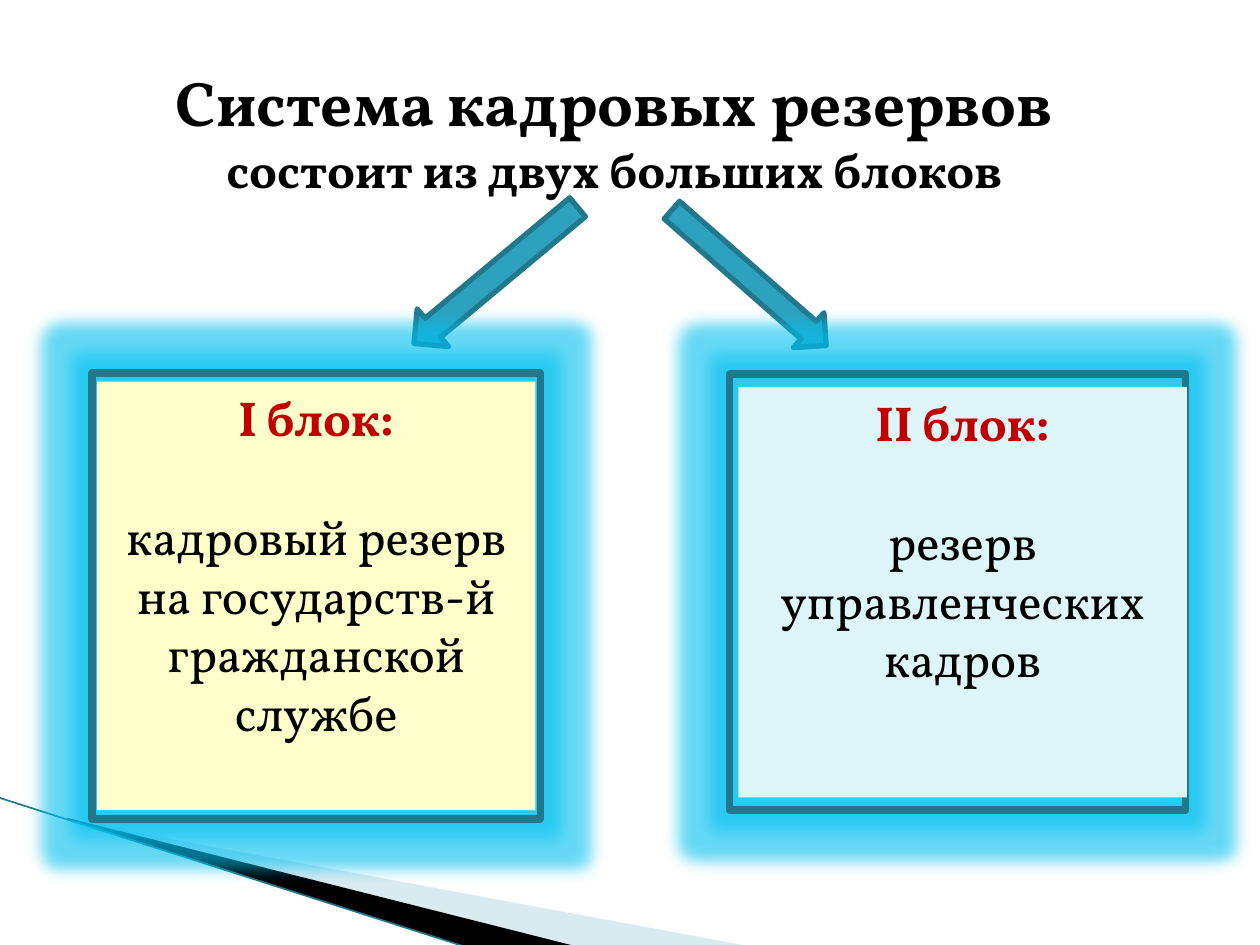
from typing import NamedTuple

from lxml import etree
from pptx import Presentation
from pptx.dml.color import RGBColor
from pptx.enum.shapes import MSO_CONNECTOR, MSO_SHAPE
from pptx.enum.text import MSO_ANCHOR, MSO_AUTO_SIZE, PP_ALIGN
from pptx.oxml.ns import qn
from pptx.util import Inches, Pt

RECT, ARROW = MSO_SHAPE.RECTANGLE, MSO_SHAPE.DOWN_ARROW
STRAIGHT = MSO_CONNECTOR.STRAIGHT
CENTER = PP_ALIGN.CENTER
TOP, MIDDLE = MSO_ANCHOR.TOP, MSO_ANCHOR.MIDDLE
NO_FIT = MSO_AUTO_SIZE.NONE

FONT = "Vollkorn"
TEAL, EDGE, GLOW = "2DA2BF", "21788D", "00C0F0"
BLACK, RED = "000000", "C00000"


class Box(NamedTuple):
    left: float
    top: float
    width: float
    height: float


class Block(NamedTuple):
    frame: Box
    panel: Box
    fill: str
    head: str
    body: str


class Arrow(NamedTuple):
    box: Box
    turn: float


class Wedge(NamedTuple):
    points: list[tuple[float, float]]
    fill: str
    alpha: int


WEDGES = [
    Wedge([(0.55, 6.51), (5.95, 7.51), (4.56, 7.51), (0.55, 6.5)], "A0CBDC", 40),
    Wedge([(0.53, 6.49), (4.57, 7.51), (3.72, 7.52), (0.54, 6.5)], BLACK, 100),
]
ARROWS = [
    Arrow(Box(3.74, 1.34, 0.39, 1.69), 50.2),
    Arrow(Box(5.76, 1.39, 0.37, 1.63), 311.3),
]
BLOCKS = [
    Block(Box(5.79, 2.97, 3.62, 3.46), Box(5.86, 3.07, 3.56, 3.26), "DEF5FA",
          "II блок:", "резерв управленческих кадров"),
    Block(Box(0.73, 2.96, 3.56, 3.54), Box(0.77, 3.03, 3.48, 3.4), "FFFFCC",
          "I блок:", "кадровый резерв на государств-й гражданской службе"),
]


def color(code: str) -> RGBColor:
    return RGBColor.from_string(code)


def paint(shape, fill: str | None, line: str | None = None, width: float = 0) -> None:
    """Set fill and outline; None leaves either one empty."""
    shape.shadow.inherit = False
    if fill:
        shape.fill.solid()
        shape.fill.fore_color.rgb = color(fill)
    else:
        shape.fill.background()
    if line:
        shape.line.color.rgb = color(line)
        shape.line.width = Pt(width)
    else:
        shape.line.fill.background()


def add_alpha(node, percent: int) -> None:
    etree.SubElement(node, qn("a:alpha"), val=str(percent * 1000))


def add_glow(shape, size: float) -> None:
    effects = shape._element.spPr.find(qn("a:effectLst"))
    glow = etree.SubElement(effects, qn("a:glow"), rad=str(Inches(size)))
    add_alpha(etree.SubElement(glow, qn("a:srgbClr"), val=GLOW), 60)


def add_shape(slide, kind, box: Box):
    return slide.shapes.add_shape(kind, *map(Inches, box))


def add_run(para, text: str, size: float, code: str, bold: bool) -> None:
    run = para.add_run()
    run.text = text
    font = run.font
    font.name, font.size, font.bold = FONT, Pt(size), bold
    font.color.rgb = color(code)


def draw_wedge(slide, wedge: Wedge) -> None:
    first, *rest = [(Inches(x), Inches(y)) for x, y in wedge.points]
    pen = slide.shapes.build_freeform(*first)
    pen.add_line_segments(rest, close=True)
    shape = pen.convert_to_shape()
    paint(shape, wedge.fill)
    if wedge.alpha < 100:
        add_alpha(shape._element.spPr.find(".//" + qn("a:srgbClr")), wedge.alpha)


def draw_edge(slide) -> None:
    ends = map(Inches, (-0.01, 6.33, 3.71, 7.52))
    line = slide.shapes.add_connector(STRAIGHT, *ends)
    line.line.color.rgb = color(EDGE)
    line.line.width = Pt(0.95)
    etree.SubElement(line._element.spPr, qn("a:effectLst"))


def draw_title(slide) -> None:
    title = slide.shapes.title
    title.left, title.top, title.width, title.height = map(
        Inches, (0.5, 0.3, 8.75, 1.88))
    frame = title.text_frame
    frame.auto_size, frame.word_wrap = NO_FIT, True
    frame.vertical_anchor = MIDDLE
    frame.margin_bottom = Inches(0.45)
    para = frame.paragraphs[0]
    para.alignment = CENTER
    add_run(para, "Система кадровых резервов", 36, BLACK, True)
    para.add_line_break()
    add_run(para, "состоит из двух больших блоков", 28, BLACK, True)


def draw_arrow(slide, arrow: Arrow) -> None:
    shape = add_shape(slide, ARROW, arrow.box)
    shape.rotation = arrow.turn
    paint(shape, TEAL, EDGE, 3)


def draw_block(slide, block: Block) -> None:
    border = add_shape(slide, RECT, block.frame)
    paint(border, None, EDGE, 4.33)
    add_glow(border, 0.25)

    panel = add_shape(slide, RECT, block.panel)
    paint(panel, block.fill)
    frame = panel.text_frame
    frame.word_wrap, frame.auto_size = True, NO_FIT
    frame.vertical_anchor = TOP
    head, body = frame.paragraphs[0], frame.add_paragraph()
    head.alignment = body.alignment = CENTER
    body.space_before = Pt(34)
    add_run(head, block.head, 28, RED, True)
    add_run(body, block.body, 28, BLACK, False)


def main() -> None:
    deck = Presentation()
    deck.slide_width, deck.slide_height = Inches(10), Inches(7.5)
    slide = deck.slides.add_slide(deck.slide_layouts[5])
    for wedge in WEDGES:
        draw_wedge(slide, wedge)
    draw_edge(slide)
    draw_title(slide)
    for arrow in ARROWS:
        draw_arrow(slide, arrow)
    for block in BLOCKS:
        draw_block(slide, block)
    deck.save("out.pptx")


if __name__ == "__main__":
    main()
